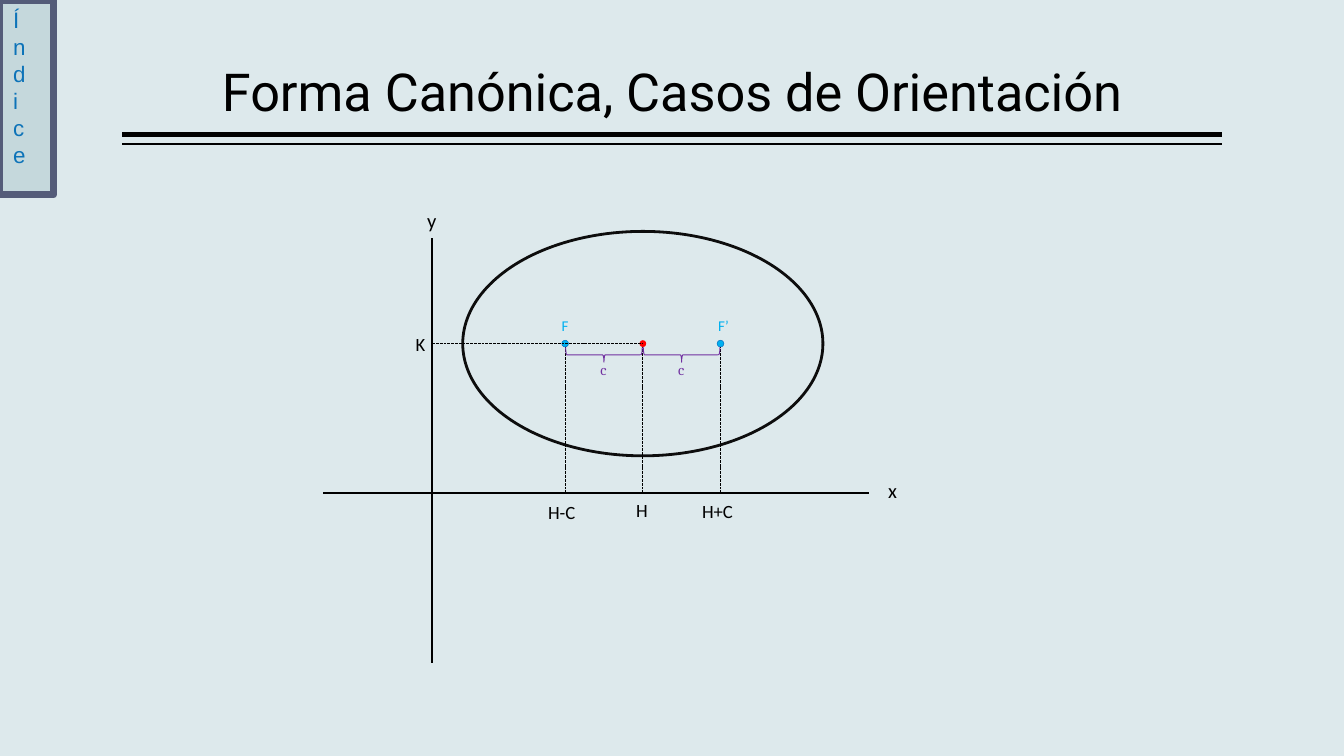
from lxml.etree import SubElement
from pptx import Presentation
from pptx.dml.color import RGBColor
from pptx.enum.dml import MSO_LINE
from pptx.enum.shapes import MSO_CONNECTOR, MSO_SHAPE
from pptx.enum.text import MSO_ANCHOR, PP_ALIGN
from pptx.oxml.ns import qn
from pptx.util import Inches, Pt

# A square grid: 100 columns across the slide, 56.25 rows down (16:9).
CELL = Inches(0.1)
COLUMNS, ROWS = 100, 56.25

BLACK, BLUE, LIGHT_BLUE = "000000", "0070C0", "00B0F0"
RED, PURPLE = "FF0000", "7030A0"

AXIS_X, AXIS_Y = 32.15, 36.7
CENTER_X, CENTER_Y = 47.83, 25.57
FOCAL_DISTANCE = 5.78
ELLIPSE_WIDTH, ELLIPSE_HEIGHT = 26.8, 16.7
DOT_SIZE = 0.5


def grid(*cells):
    return [round(cell * CELL) for cell in cells]


def color(hex_string):
    return RGBColor.from_string(hex_string)


def add_line(slide, start, end, width=1, dashed=False):
    line = slide.shapes.add_connector(MSO_CONNECTOR.STRAIGHT, *grid(*start, *end))
    line.line.color.rgb = color(BLACK)
    line.line.width = Pt(width)
    if dashed:
        line.line.dash_style = MSO_LINE.SQUARE_DOT
    SubElement(line._element.spPr, qn("a:effectLst"))
    return line


def add_shape(slide, kind, box, fill=None, line=None, width=1):
    shape = slide.shapes.add_shape(kind, *grid(*box))
    shape.shadow.inherit = False
    if fill:
        shape.fill.solid()
        shape.fill.fore_color.rgb = color(fill)
    else:
        shape.fill.background()
    if line:
        shape.line.color.rgb = color(line)
        shape.line.width = Pt(width)
    else:
        shape.line.fill.background()
    return shape


def add_text(slide, text, box, size, fill=BLACK, font="Calibri", wrap=False, spacing=1.0):
    shape = slide.shapes.add_textbox(*grid(*box))
    frame = shape.text_frame
    frame.word_wrap = wrap
    frame.text = text
    paragraph = frame.paragraphs[0]
    paragraph.line_spacing = spacing
    for run in paragraph.runs:
        run.font.size = Pt(size)
        run.font.name = font
        run.font.color.rgb = color(fill)
    return shape


def add_dot(slide, x, fill, line=None):
    corner = x - DOT_SIZE / 2, CENTER_Y - DOT_SIZE / 2
    add_shape(slide, MSO_SHAPE.OVAL, (*corner, DOT_SIZE, DOT_SIZE), fill, line, 0.25)


def add_focal_brace(slide, middle):
    """Draw a brace that opens upward around middle, with its label c."""
    depth, span = 1.1, 5.7
    brace = add_shape(slide, MSO_SHAPE.LEFT_BRACE,
                      (middle - depth / 2, 23.55, depth, span), line=PURPLE, width=0.5)
    brace.rotation = 270
    add_text(slide, "c", (middle - 1.25, 26.35, 2.3, 2.4), 8, PURPLE, "Cambria", wrap=True)


def add_title(slide):
    for y, width in ((10, 3), (10.7, 1)):
        add_line(slide, (9.1, y), (90.95, y), width)
    title = add_text(slide, "Forma Canónica, Casos de Orientación",
                     (9.1, 0.6, 81.8, 9), 28, font="Roboto", wrap=True, spacing=0.9)
    frame = title.text_frame
    frame.margin_left = frame.margin_right = 0
    frame.vertical_anchor = MSO_ANCHOR.BOTTOM
    frame.paragraphs[0].alignment = PP_ALIGN.CENTER


def add_index_tab(slide):
    label = add_text(slide, "Índice", (0, 0, 4.3, 15.7), 12, BLUE, "Arial", wrap=True)
    label.text_frame._txBody.bodyPr.set("vert", "wordArtVert")
    tab = add_shape(slide, MSO_SHAPE.RECTANGLE, (0, 0, 4, 14.5), "528693", "545C79", 3.78)
    tab_color = tab._element.spPr.find(qn("a:solidFill"))[0]
    SubElement(tab_color, qn("a:alpha"), val="17000")


def add_axes(slide):
    add_line(slide, (AXIS_X, 49.3), (AXIS_X, 17.7))
    add_line(slide, (24.05, AXIS_Y), (64.65, AXIS_Y))
    add_text(slide, "x", (65.1, 35.25, 3, 2.7), 11, wrap=True, spacing=0.9)
    add_text(slide, "y", (30.8, 15.2, 2.6, 2.7), 11, wrap=True, spacing=0.9)


def add_ellipse(slide):
    left_focus, right_focus = CENTER_X - FOCAL_DISTANCE, CENTER_X + FOCAL_DISTANCE
    add_shape(slide, MSO_SHAPE.OVAL,
              (CENTER_X - ELLIPSE_WIDTH / 2, CENTER_Y - ELLIPSE_HEIGHT / 2,
               ELLIPSE_WIDTH, ELLIPSE_HEIGHT), line="0D0D0D", width=1.5)
    add_dot(slide, CENTER_X, RED)
    for x in (left_focus, right_focus):
        add_dot(slide, x, LIGHT_BLUE, BLUE)

    for x in (left_focus, CENTER_X, right_focus):
        add_line(slide, (x, AXIS_Y), (x, CENTER_Y + DOT_SIZE / 2), 0.5, dashed=True)
    add_line(slide, (AXIS_X, CENTER_Y), (CENTER_X, CENTER_Y), 0.5, dashed=True)

    for text, left, top, width in (("H-C", 39.8, 36.8, 4.5), ("H", 46.35, 36.65, 3),
                                   ("H+C", 51.25, 36.7, 4.9), ("K", 29.95, 24.3, 2.9)):
        add_text(slide, text, (left, top, width, 2.7), 10)
    for text, left, width in (("F", 40.8, 2.7), ("F’", 52.45, 2.9)):
        add_text(slide, text, (left, 23.1, width, 2.4), 8, LIGHT_BLUE)

    for side in (-1, 1):
        add_focal_brace(slide, CENTER_X + side * FOCAL_DISTANCE / 2)


def main():
    presentation = Presentation()
    presentation.slide_width, presentation.slide_height = grid(COLUMNS, ROWS)
    slide = presentation.slides.add_slide(presentation.slide_layouts[6])
    slide.background.fill.solid()
    slide.background.fill.fore_color.rgb = color("DDE9EC")
    add_title(slide)
    add_index_tab(slide)
    add_axes(slide)
    add_ellipse(slide)
    presentation.save("out.pptx")


if __name__ == "__main__":
    main()
